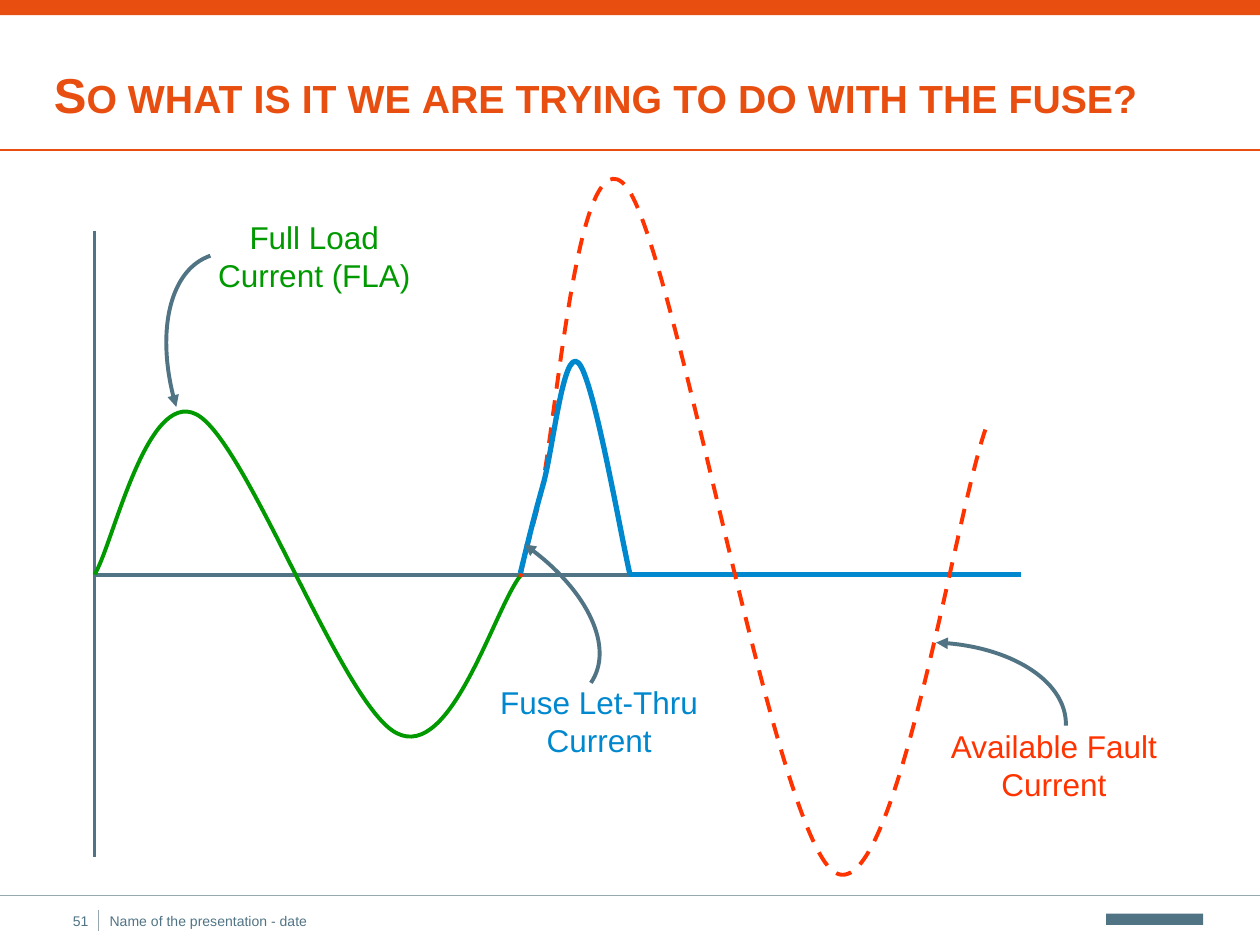
from dataclasses import dataclass

from lxml.etree import SubElement
from pptx import Presentation
from pptx.dml.color import RGBColor
from pptx.enum.dml import MSO_LINE
from pptx.enum.shapes import MSO_CONNECTOR, MSO_SHAPE
from pptx.enum.text import PP_ALIGN
from pptx.oxml.ns import qn
from pptx.util import Inches, Pt


@dataclass(frozen=True)
class Theme:
    font: str = "Arial"
    orange: str = "E84E0F"
    slate: str = "517485"
    pale: str = "96A9B1"
    green: str = "009900"
    red: str = "FF3300"
    blue: str = "0088CE"
    title_size: int = 28
    label_size: int = 18
    footer_size: int = 8


theme = Theme()
deck = Presentation()
deck.slide_width, deck.slide_height = Inches(10), Inches(7.5)
page = deck.slides.add_slide(deck.slide_layouts[6])
shapes = page.shapes


def style_line(shape, color, width, dashed=False, arrow=False):
    shape.line.color.rgb = RGBColor.from_string(color)
    shape.line.width = Pt(width)
    if dashed:
        shape.line.dash_style = MSO_LINE.DASH
    properties = shape._element.spPr
    if arrow:
        SubElement(properties.find(qn("a:ln")), qn("a:tailEnd"), type="triangle")
    SubElement(properties, qn("a:effectLst"))


def add_text(text, area, size, color, align=PP_ALIGN.LEFT, margins=(0, 0, 0, 0),
             wrap=True, bold=False):
    box = shapes.add_textbox(*map(Inches, area))
    frame = box.text_frame
    frame.word_wrap = wrap
    for side, margin in zip(("left", "top", "right", "bottom"), margins):
        setattr(frame, f"margin_{side}", Inches(margin))
    para = frame.paragraphs[0]
    para.alignment = align
    span = para.add_run()
    span.text = text
    for name, value in {"name": theme.font, "size": Pt(size), "bold": bold}.items():
        setattr(span.font, name, value)
    span.font.color.rgb = RGBColor.from_string(color)
    return span


# Footer
add_text("Name of the presentation - date", (0.87, 7.24, 1.59, 0.13),
         theme.footer_size, theme.slate, wrap=False)
add_text("51", (0.5, 7.24, 0.28, 0.13), theme.footer_size, theme.slate, PP_ALIGN.CENTER)
mark = shapes.add_shape(MSO_SHAPE.RECTANGLE, Inches(8.78), Inches(7.25),
                        Inches(0.77), Inches(0.09))

# Top band
band = shapes.add_shape(MSO_SHAPE.RECTANGLE, 0, 0, deck.slide_width, Inches(0.12))
for block, color in ((mark, theme.slate), (band, theme.orange)):
    block.shadow.inherit = False
    block.fill.solid()
    block.fill.fore_color.rgb = RGBColor.from_string(color)
    block.line.fill.background()

# Rules, axes and the cleared-fault line: x1, y1, x2, y2
straight_lines = [
    ((0.78, 7.22, 0.78, 7.39), theme.pale, 0.75),
    ((0, 7.11, 10, 7.11), theme.pale, 0.75),
    ((0, 1.19, 10, 1.19), theme.orange, 0.75),
    ((8.06, 4.56, 0.76, 4.56), theme.slate, 2.25),
    ((0.75, 1.83, 0.75, 6.8), theme.slate, 2.25),
    ((4.99, 4.56, 8.1, 4.56), theme.blue, 3),
]
for ends, color, width in straight_lines:
    connector = shapes.add_connector(MSO_CONNECTOR.STRAIGHT, *map(Inches, ends))
    style_line(connector, color, width)

# Title
title = add_text("So what is it we are trying to do with the fuse?", (0.33, 0.43, 9.17, 0.73),
                 theme.title_size, theme.orange, margins=(0.1, 0.08, 0.1, 0.05), bold=True)
title.font._element.set("cap", "small")

# Waves and pointers: a start point, then two controls and an end per Bezier
pointer = {"color": theme.slate, "width": 2.25, "arrow": True}
curves = [
    ([(0.75, 4.56), (0.89, 4.35), (1.16, 3.08), (1.56, 3.29), (1.96, 3.5), (2.72, 5.61),
      (3.15, 5.82), (3.58, 6.04), (3.92, 4.84), (4.13, 4.57)],
     {"color": theme.green, "width": 2.25}),
    ([(1.67, 2.03), (1.35, 2.14), (1.23, 2.67), (1.4, 3.23)], pointer),
    ([(4.13, 4.58), (4.15, 4.49), (4.13, 4.54), (4.27, 4.02), (4.41, 3.51), (4.57, 1),
      (4.97, 1.48), (5.36, 1.97), (6.14, 6.6), (6.62, 6.92), (7.09, 7.24), (7.57, 4.14),
      (7.82, 3.41)],
     {"color": theme.red, "width": 2.25, "dashed": True}),
    ([(8.46, 5.76), (8.47, 5.42), (8.01, 5.12), (7.43, 5.1)], pointer),
    ([(4.13, 4.55), (4.16, 4.43), (4.23, 4.13), (4.31, 3.85), (4.39, 3.57), (4.47, 2.76),
      (4.59, 2.88), (4.71, 2.99), (4.92, 4.21), (5, 4.56)],
     {"color": theme.blue, "width": 3}),
    ([(4.69, 5.42), (4.88, 5.14), (4.64, 4.65), (4.16, 4.32)], pointer),
]
for points, line_format in curves:
    start, *rest = [(Inches(x), Inches(y)) for x, y in points]
    builder = shapes.build_freeform(*start)
    builder.add_line_segments(rest, close=False)
    curve = builder.convert_to_shape()
    # Join each three straight segments into one cubic Bezier
    segments = curve._element.findall(".//" + qn("a:lnTo"))
    outline = segments[0].getparent()
    for first in range(0, len(segments), 3):
        bezier = SubElement(outline, qn("a:cubicBezTo"))
        for segment in segments[first:first + 3]:
            bezier.append(segment[0])
            outline.remove(segment)
    curve.fill.background()
    style_line(curve, **line_format)

# Curve labels
labels = [
    ("Full Load Current (FLA)", (1.53, 1.68, 1.93, 0.7), theme.green),
    ("Available Fault Current", (7.33, 5.72, 2.07, 0.7), theme.red),
    ("Fuse Let-Thru Current", (3.79, 5.37, 1.93, 0.7), theme.blue),
]
for text, area, color in labels:
    add_text(text, area, theme.label_size, color, PP_ALIGN.CENTER, (0.1, 0.05, 0.1, 0.05))

deck.save("out.pptx")
